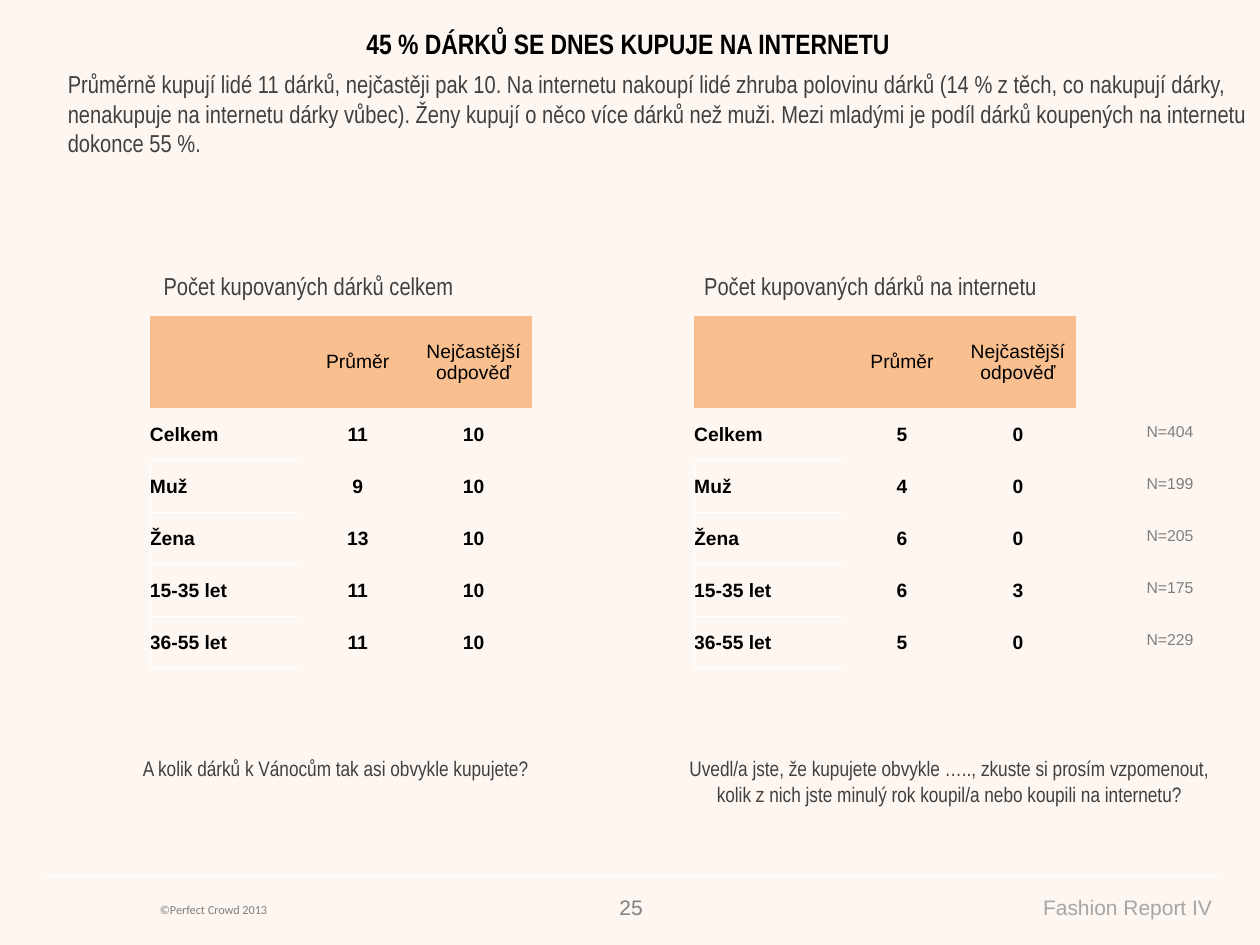
from lxml import etree
from pptx import Presentation
from pptx.dml.color import RGBColor
from pptx.enum.shapes import MSO_CONNECTOR
from pptx.enum.text import MSO_ANCHOR, MSO_AUTO_SIZE, PP_ALIGN
from pptx.oxml.ns import qn
from pptx.util import Inches, Pt

LEFT, CENTER, RIGHT = PP_ALIGN.LEFT, PP_ALIGN.CENTER, PP_ALIGN.RIGHT
TOP, MIDDLE = MSO_ANCHOR.TOP, MSO_ANCHOR.MIDDLE
NO_AUTOFIT = MSO_AUTO_SIZE.NONE
STRAIGHT = MSO_CONNECTOR.STRAIGHT
PLAIN_TABLE_STYLE = "{2D5ABB26-0587-4C30-8999-92F81FD0307C}"

COLORS = {
    "background": "FEF6F0",
    "header": "FABF8F",
    "rule": "FFFFFF",
    "black": "000000",
    "text": "404040",
    "footer": "808080",
    "report": "A6A6A6",
    "count": "7F7F7F",
}
GROUPS = ["Celkem", "Muž", "Žena", "15-35 let", "36-55 let"]
HEADERS = ["", "Průměr", "Nejčastější odpověď"]
TOTAL_GIFTS = [(11, 10), (9, 10), (13, 10), (11, 10), (11, 10)]
ONLINE_GIFTS = [(5, 0), (4, 0), (6, 0), (6, 3), (5, 0)]
COUNTS = [404, 199, 205, 175, 229]
SUMMARY = (
    "Průměrně kupují lidé 11 dárků, nejčastěji pak 10. Na internetu nakoupí lidé "
    "zhruba polovinu dárků (14 % z těch, co nakupují dárky, nenakupuje na internetu "
    "dárky vůbec). Ženy kupují o něco více dárků než muži. Mezi mladými je podíl "
    "dárků koupených na internetu dokonce 55 %."
)
TOTAL_QUESTION = "A kolik dárků k Vánocům tak asi obvykle kupujete?"
ONLINE_QUESTION = (
    "Uvedl/a jste, že kupujete obvykle ….., zkuste si prosím vzpomenout, "
    "kolik z nich jste minulý rok koupil/a nebo koupili na internetu?"
)
HEADER_HEIGHT = Inches(0.73)
ROW_HEIGHT = Inches(2.07) // len(GROUPS)


def write_text(frame, text, size, color, font="Arial", align=LEFT, bold=False):
    """Write one formatted run into the first paragraph of a frame."""
    para = frame.paragraphs[0]
    para.alignment = align
    span = para.add_run()
    span.text = text
    span.font.size = Pt(size)
    span.font.name = font
    span.font.bold = bold
    span.font.color.rgb = RGBColor.from_string(COLORS[color])


def add_text(page, area, text, size, color="text", font="Arial Narrow", align=LEFT):
    """Add a wrapping text box."""
    box = page.shapes.add_textbox(*map(Inches, area))
    box.text_frame.word_wrap = True
    write_text(box.text_frame, text, size, color, font, align)


def set_title(page, text):
    """Place and format the title placeholder."""
    title = page.shapes.title
    title.left, title.top = Inches(0.56), Inches(0.16)
    title.width, title.height = Inches(8.85), Inches(0.37)
    title.text_frame.auto_size = NO_AUTOFIT
    title.text_frame.vertical_anchor = TOP
    write_text(title.text_frame, text, 16, "black", "Arial Narrow", CENTER, True)


def add_rule(page):
    """Draw the thin line above the footer."""
    rule = page.shapes.add_connector(
        STRAIGHT, Inches(0.33), Inches(6.95), Inches(9.67), Inches(6.95))
    rule.line.color.rgb = RGBColor.from_string(COLORS["rule"])
    rule.line.width = Pt(0.75)
    etree.SubElement(rule._element.spPr, qn("a:effectLst"))


def add_table(page, left, top, widths, heights):
    """Add an unstyled table with the given column widths and row heights."""
    frame = page.shapes.add_table(
        len(heights), len(widths), Inches(left), Inches(top),
        Inches(sum(widths)), sum(heights))
    table = frame.table
    table.first_row = table.horz_banding = False
    table._tbl.tblPr.find(qn("a:tableStyleId")).text = PLAIN_TABLE_STYLE
    for column, width in zip(table.columns, widths):
        column.width = Inches(width)
    for row, height in zip(table.rows, heights):
        row.height = height
    return table


def fill_cell(cell, text, size, color, align=LEFT, bold=False, fill=None):
    """Set the margins, fill and text of a cell."""
    cell.margin_left = cell.margin_right = cell.margin_top = cell.margin_bottom = 0
    cell.vertical_anchor = MIDDLE
    if fill:
        cell.fill.solid()
        cell.fill.fore_color.rgb = RGBColor.from_string(COLORS[fill])
    else:
        cell.fill.background()
    if text:
        write_text(cell.text_frame, text, size, color, align=align, bold=bold)


def add_borders(cell, sides):
    """Draw thin borders on the named sides, given in L, R, T, B order."""
    properties = cell._tc.get_or_add_tcPr()
    for index, side in enumerate(sides):
        border = etree.Element(qn(f"a:ln{side}"), w=str(Pt(0.5)))
        fill = etree.SubElement(border, qn("a:solidFill"))
        etree.SubElement(fill, qn("a:srgbClr"), val=COLORS["rule"])
        properties.insert(index, border)


def add_gift_table(page, left, values):
    """Add a table of mean and most frequent gift counts by group."""
    heights = [HEADER_HEIGHT] + [ROW_HEIGHT] * len(GROUPS)
    table = add_table(page, left, 2.51, [1.19, 0.92, 0.92], heights)
    for column, text in enumerate(HEADERS):
        fill_cell(table.cell(0, column), text, 11, "black", CENTER, fill="header")
    for row, (group, numbers) in enumerate(zip(GROUPS, values), 1):
        fill_cell(table.cell(row, 0), group, 11, "black", bold=True)
        add_borders(table.cell(row, 0), "B" if row == 1 else "LTB")
        for column, number in enumerate(numbers, 1):
            fill_cell(table.cell(row, column), str(number), 11, "black", CENTER, True)


def add_count_table(page):
    """Add the column of sample sizes."""
    table = add_table(page, 9.1, 3.22, [0.61], [ROW_HEIGHT] * len(COUNTS))
    for row, count in enumerate(COUNTS):
        fill_cell(table.cell(row, 0), f"N={count}", 9, "count")


def main():
    """Build the slide and save the deck."""
    deck = Presentation()
    deck.slide_width, deck.slide_height = Inches(10), Inches(7.5)
    page = deck.slides.add_slide(deck.slide_layouts[5])
    page.background.fill.solid()
    page.background.fill.fore_color.rgb = RGBColor.from_string(COLORS["background"])

    add_rule(page)
    add_text(page, (1.17, 7.11, 2.91, 0.22), "©Perfect Crowd 2013", 7, "footer", "Calibri")
    add_text(page, (6.01, 7.05, 3.71, 0.3), "Fashion Report IV", 12, "report", "Arial", RIGHT)
    add_text(page, (4.79, 7.05, 0.41, 0.3), "25", 12, "footer", "Arial", RIGHT)

    set_title(page, "45 % DÁRKŮ SE DNES KUPUJE NA INTERNETU")
    add_text(page, (0.44, 0.5, 9.56, 0.44), SUMMARY, 14)

    add_text(page, (1.2, 2.1, 2.98, 0.34), "Počet kupovaných dárků celkem", 14)
    add_text(page, (5.49, 2.1, 2.98, 0.34), "Počet kupovaných dárků na internetu", 14)
    add_gift_table(page, 1.19, TOTAL_GIFTS)
    add_gift_table(page, 5.51, ONLINE_GIFTS)
    add_count_table(page)
    add_text(page, (0.35, 5.95, 4.63, 0.3), TOTAL_QUESTION, 12, align=CENTER)
    add_text(page, (5.22, 5.95, 4.63, 0.51), ONLINE_QUESTION, 12, align=CENTER)
    deck.save("out.pptx")


if __name__ == "__main__":
    main()
